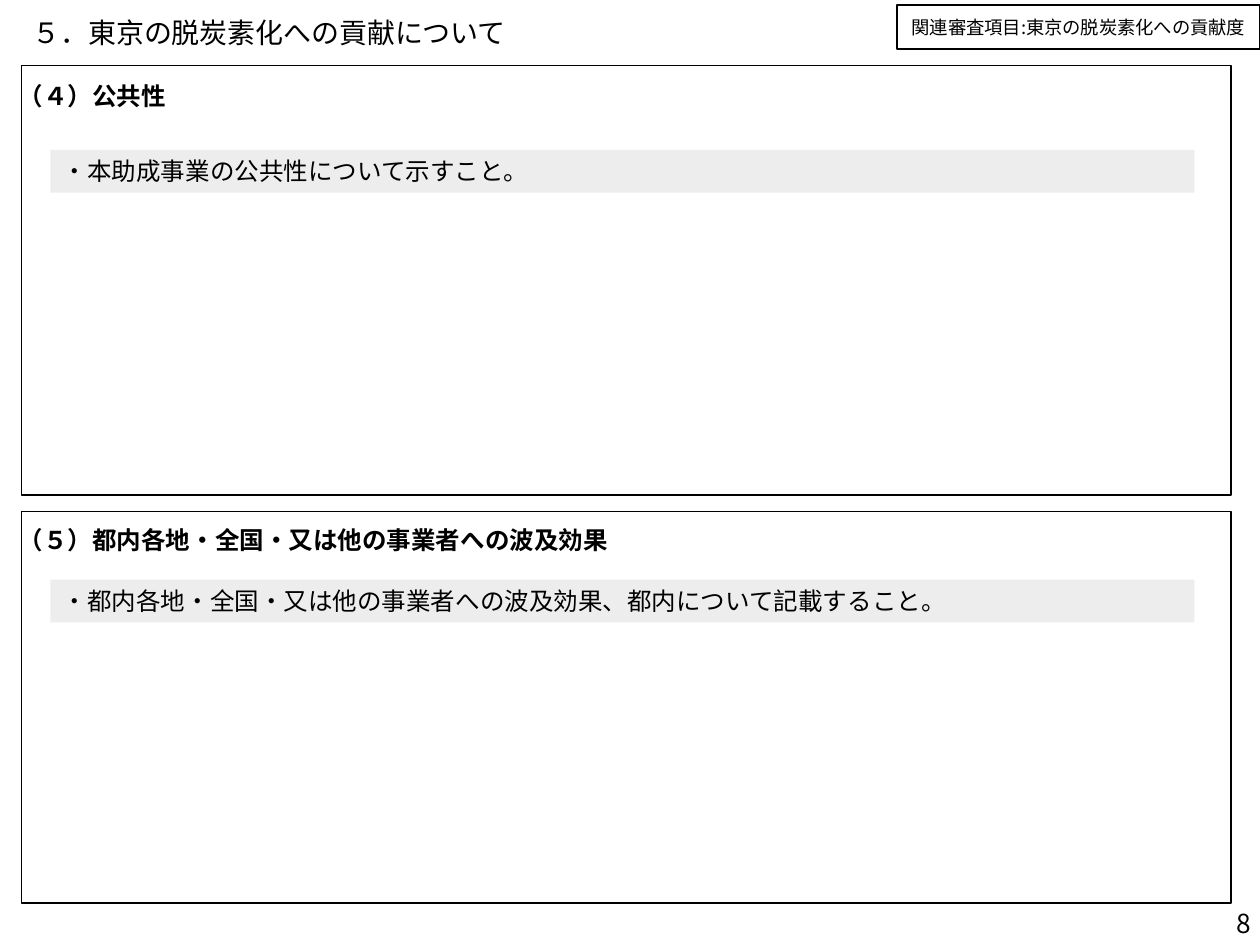
from lxml.etree import SubElement
from pptx import Presentation
from pptx.dml.color import RGBColor
from pptx.enum.shapes import MSO_SHAPE
from pptx.enum.text import MSO_ANCHOR, PP_ALIGN
from pptx.oxml.ns import qn
from pptx.util import Inches, Pt

FONT = "Noto Sans CJK JP"
BLACK = "000000"
BAND_GREY = "EDEDED"
SLIDE_WIDTH, SLIDE_HEIGHT = 10, 7.5
FRAME_LEFT, FRAME_WIDTH = 0.17, 9.6
HEADING_LEFT, HEADING_WIDTH, HEADING_HEIGHT = 0.05, 6.31, 0.35
BAND_LEFT, BAND_WIDTH, BAND_HEIGHT = 0.4, 9.08, 0.34

SECTIONS = [
    {"top": 0.52, "height": 3.41, "heading_top": 0.59, "band_top": 1.19,
     "heading": "（４）公共性",
     "instruction": "・本助成事業の公共性について示すこと。"},
    {"top": 4.06, "height": 3.11, "heading_top": 4.12, "band_top": 4.6,
     "heading": "（５）都内各地・全国・又は他の事業者への波及効果",
     "instruction": "・都内各地・全国・又は他の事業者への波及効果、都内について記載すること。"},
]


def color(hex_value):
    return RGBColor.from_string(hex_value)


def write(holder, text, size, bold=False, align=PP_ALIGN.LEFT,
          anchor=MSO_ANCHOR.TOP, margins=(0.1, 0.05), spacing=None):
    frame = holder.text_frame
    frame.text = text
    frame.word_wrap = True
    frame.vertical_anchor = anchor
    frame.margin_left = frame.margin_right = Inches(margins[0])
    frame.margin_top = frame.margin_bottom = Inches(margins[1])
    paragraph = frame.paragraphs[0]
    paragraph.alignment = align
    if spacing:
        paragraph.line_spacing = spacing
    run = paragraph.runs[0]
    run.font.name = FONT
    run.font.size = Pt(size)
    run.font.bold = bold
    run.font.color.rgb = color(BLACK)
    SubElement(run.font._element, qn("a:ea"), typeface=FONT)


def add_label(slide, box, text, size, **style):
    label = slide.shapes.add_textbox(*map(Inches, box))
    write(label, text, size, **style)


def add_box(slide, box, fill=None, line_width=None):
    rectangle = slide.shapes.add_shape(MSO_SHAPE.RECTANGLE, *map(Inches, box))
    rectangle.shadow.inherit = False
    if fill:
        rectangle.fill.solid()
        rectangle.fill.fore_color.rgb = color(fill)
    else:
        rectangle.fill.background()
    if line_width:
        rectangle.line.color.rgb = color(BLACK)
        rectangle.line.width = Pt(line_width)
    else:
        rectangle.line.fill.background()
    return rectangle


def add_section(slide, section):
    add_box(slide, (FRAME_LEFT, section["top"], FRAME_WIDTH, section["height"]),
            line_width=1)
    add_label(slide, (HEADING_LEFT, section["heading_top"], HEADING_WIDTH, HEADING_HEIGHT),
              section["heading"], 14, bold=True)
    band = add_box(slide, (BAND_LEFT, section["band_top"], BAND_WIDTH, BAND_HEIGHT),
                   fill=BAND_GREY)
    write(band, section["instruction"], 14)


def main():
    deck = Presentation()
    deck.slide_width, deck.slide_height = Inches(SLIDE_WIDTH), Inches(SLIDE_HEIGHT)
    slide = deck.slides.add_slide(deck.slide_layouts[6])

    add_label(slide, (8.25, 7.25, 1.75, 0.15), "8", 15, align=PP_ALIGN.RIGHT,
              anchor=MSO_ANCHOR.MIDDLE, margins=(0.07, 0.04))
    add_label(slide, (0.16, 0.09, 9.44, 0.37), "５．東京の脱炭素化への貢献について", 16,
              anchor=MSO_ANCHOR.MIDDLE, spacing=0.9)
    for section in SECTIONS:
        add_section(slide, section)
    review_item = add_box(slide, (7.12, 0.04, 2.88, 0.35), line_width=0.75)
    write(review_item, "関連審査項目:東京の脱炭素化への貢献度", 10.5, align=PP_ALIGN.CENTER,
          anchor=MSO_ANCHOR.MIDDLE, margins=(0.1, 0))

    deck.save("out.pptx")


if __name__ == "__main__":
    main()
